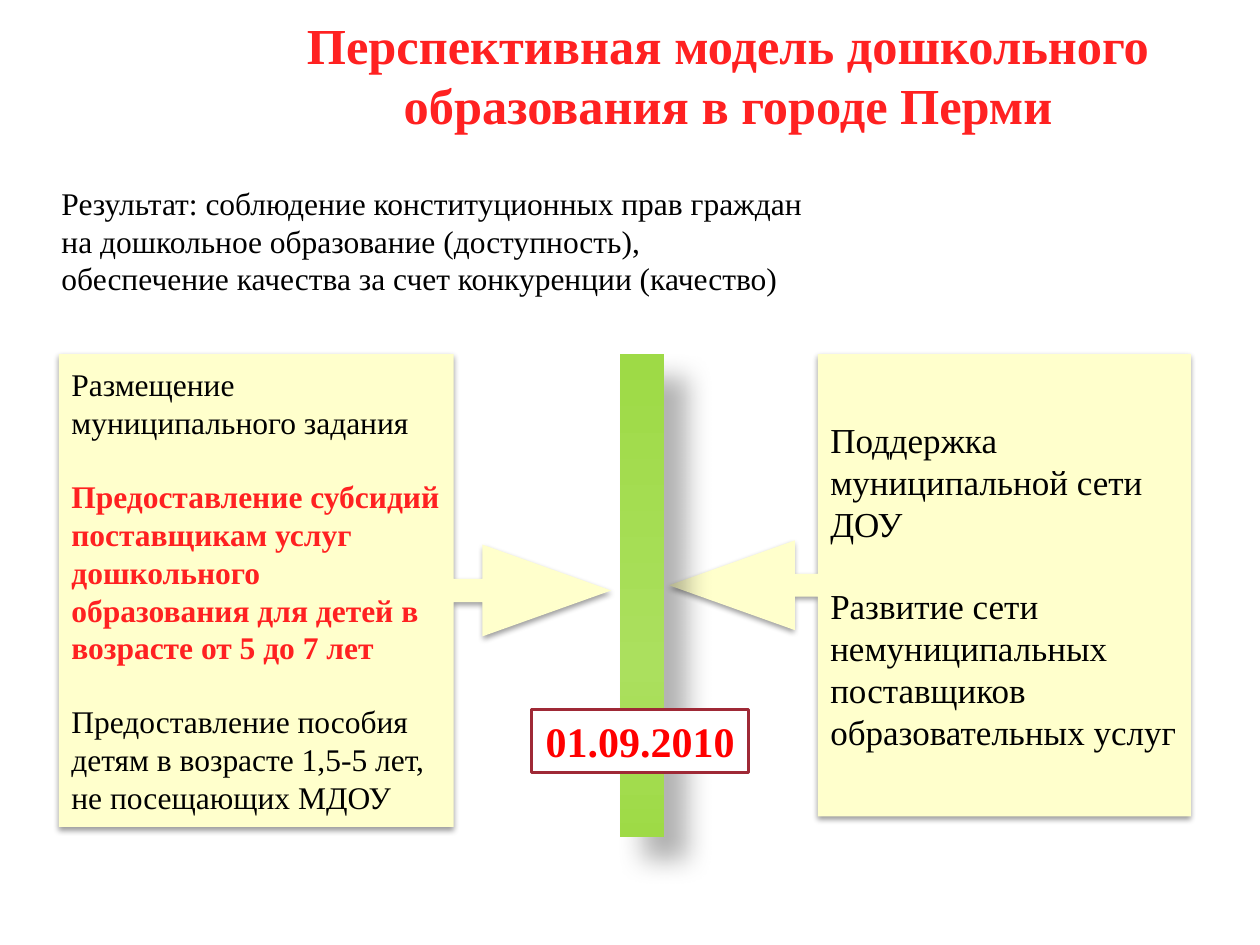
"""Build the slide on the future model of preschool education in Perm."""
from copy import deepcopy
from dataclasses import dataclass

from lxml import etree
from pptx import Presentation
from pptx.dml.color import RGBColor
from pptx.enum.shapes import MSO_SHAPE
from pptx.enum.text import MSO_ANCHOR, MSO_AUTO_SIZE, PP_ALIGN
from pptx.oxml.ns import qn
from pptx.util import Cm, Pt


@dataclass(frozen=True)
class Theme:
    font: str = "Times New Roman"
    ink: str = "000000"
    accent: str = "FF2121"
    date: str = "FF0000"
    date_border: str = "9F2936"
    paper: str = "FFFFFF"
    callout: str = "FFFFCC"
    bar: tuple = ((0, "9EDA46"), (0.35, "ABE05E"), (1, "9EDA46"))
    title_size: float = 28.8
    text_size: float = 18
    support_size: float = 20
    date_size: float = 24
    line_height: float = 1.15


THEME = Theme()
TITLE = "Перспективная модель дошкольного образования в городе Перми"
RESULT = [
    "Результат: соблюдение конституционных прав граждан",
    "на дошкольное образование (доступность),",
    "обеспечение качества за счет конкуренции (качество)",
]
FUNDING = [
    "Размещение муниципального задания",
    "Предоставление субсидий поставщикам услуг дошкольного образования для детей в возрасте от 5 до 7 лет",
    "Предоставление пособия детям в возрасте 1,5-5 лет, не посещающих МДОУ",
]
SUPPORT = [
    "Поддержка муниципальной сети ДОУ",
    "Развитие сети немуниципальных поставщиков образовательных услуг",
]
START_DATE = "01.09.2010"

DIAGRAM_TOP = 7.14
CALLOUTS = [
    (MSO_SHAPE.RIGHT_ARROW_CALLOUT, (1.19, DIAGRAM_TOP, 11.13, 9.53), FUNDING, THEME.text_size, 1),
    (MSO_SHAPE.LEFT_ARROW_CALLOUT, (13.49, DIAGRAM_TOP, 10.52, 9.32), SUPPORT, THEME.support_size, None),
]
ARROW_PROPORTIONS = (0.049, 0.097, 0.272, 0.715)


def rgb(value):
    return RGBColor.from_string(value)


def box(place):
    return [Cm(length) for length in place]


def write(frame, lines, size, color=THEME.ink, bold=False, align=PP_ALIGN.LEFT, gap=0):
    frame.text = "\n".join(lines)
    for index, paragraph in enumerate(frame.paragraphs):
        paragraph.alignment = align
        if index and gap:
            paragraph.space_before = Pt(gap)
        for run in paragraph.runs:
            emphasize(run, color, bold)
            run.font.name = THEME.font
            run.font.size = Pt(size)


def emphasize(run, color, bold=True):
    run.font.color.rgb = rgb(color)
    run.font.bold = bold


def add_block(slide, kind, place):
    block = slide.shapes.add_shape(kind, *box(place))
    block.shadow.inherit = False
    block.line.fill.background()
    return block


def cast_shadow(block, opacity, blur, distance, angle):
    effects = block._element.spPr.find(qn("a:effectLst"))
    shadow = etree.SubElement(
        effects, qn("a:outerShdw"), blurRad=str(Pt(blur)), dist=str(Pt(distance)),
        dir=str(angle * 60000), algn="ctr", rotWithShape="0")
    tint = etree.SubElement(shadow, qn("a:srgbClr"), val="000000")
    etree.SubElement(tint, qn("a:alpha"), val=str(opacity * 1000))


def add_callout(slide, kind, place, lines, size, highlighted):
    callout = add_block(slide, kind, place)
    for index, proportion in enumerate(ARROW_PROPORTIONS):
        callout.adjustments[index] = proportion
    callout.fill.solid()
    callout.fill.fore_color.rgb = rgb(THEME.callout)
    cast_shadow(callout, 38, 3.1, 1.6, 90)
    frame = callout.text_frame
    frame.word_wrap = True
    frame.vertical_anchor = MSO_ANCHOR.MIDDLE
    write(frame, lines, size, gap=round(size * THEME.line_height, 1))
    if highlighted is not None:
        emphasize(frame.paragraphs[highlighted].runs[0], THEME.accent)


def add_bar(slide):
    bar = add_block(slide, MSO_SHAPE.RECTANGLE, (12.5, DIAGRAM_TOP, 0.89, 9.73))
    bar.fill.gradient()
    bar.fill.gradient_angle = 90
    stops = bar._element.spPr.find(qn("a:gradFill")).find(qn("a:gsLst"))
    stops.append(deepcopy(stops[0]))
    for stop, (position, color) in zip(bar.fill.gradient_stops, THEME.bar):
        stop.position = position
        stop.color.rgb = rgb(color)
    cast_shadow(bar, 30, 15, 18, 45)


def add_date(slide):
    date = add_block(slide, MSO_SHAPE.RECTANGLE, (10.72, 14.3, 4.37, 1.27))
    date.fill.solid()
    date.fill.fore_color.rgb = rgb(THEME.paper)
    date.line.color.rgb = rgb(THEME.date_border)
    date.line.width = Pt(2)
    date.text_frame.word_wrap = False
    write(date.text_frame, [START_DATE], THEME.date_size, THEME.date, True, PP_ALIGN.CENTER)


def main():
    deck = Presentation()
    deck.slide_width, deck.slide_height = Cm(25.4), Cm(19.05)
    slide = deck.slides.add_slide(deck.slide_layouts[5])

    title = slide.shapes.title
    title.left, title.top, title.width, title.height = box((3.96, 0.2, 21.44, 2.59))
    title.text_frame.auto_size = MSO_AUTO_SIZE.NONE
    title.text_frame.vertical_anchor = MSO_ANCHOR.MIDDLE
    write(title.text_frame, [TITLE], THEME.title_size, THEME.accent, True, PP_ALIGN.CENTER)

    for callout in CALLOUTS:
        add_callout(slide, *callout)

    result = slide.shapes.add_textbox(*box((0.99, 3.58, 23.01, 2.57)))
    result.text_frame.word_wrap = True
    write(result.text_frame, RESULT, THEME.text_size)

    add_bar(slide)
    add_date(slide)
    deck.save("out.pptx")


if __name__ == "__main__":
    main()
